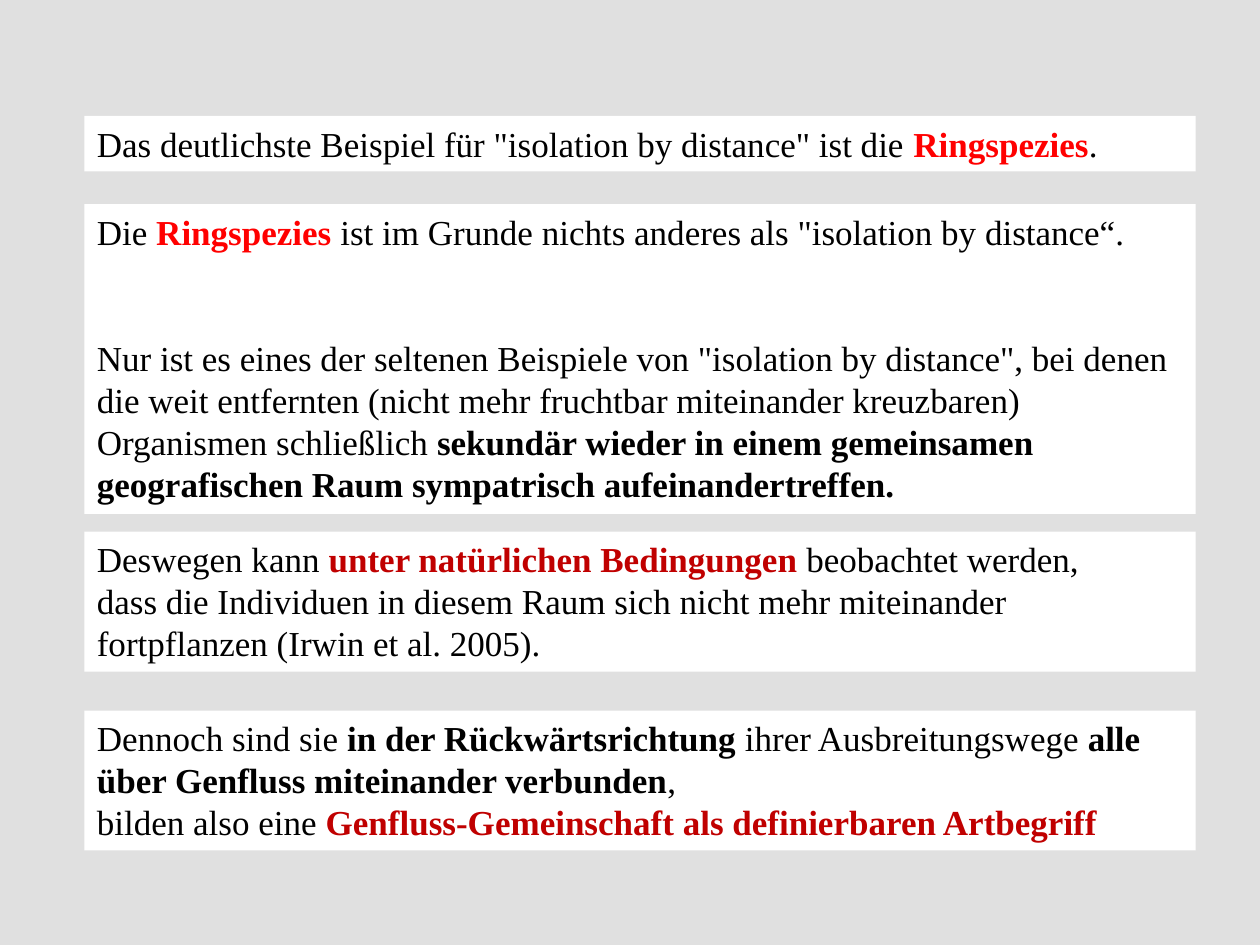
import pptx
import pptx.util
import pptx.dml.color
import pptx.enum.text

Inches, Pt = pptx.util.Inches, pptx.util.Pt
Color = pptx.dml.color.RGBColor.from_string

theme = {
    "font": "Times New Roman",
    "size": Pt(20),
    "gap": Pt(48),
    "back": Color("E0E0E0"),
    "panel": Color("FFFFFF"),
    "text": Color("000000"),
    "bold": Color("000000"),
    "red": Color("FF0000"),
    "dark": Color("C00000"),
}

panels = [
    (0.92, 0.44, [
        [('Das deutlichste Beispiel für "isolation by distance" ist die ', "text"),
         ("Ringspezies", "red"), (".", "text")],
    ]),
    (1.62, 2.46, [
        [("Die", "text"), (" Ringspezies", "red"),
         (' ist im Grunde nichts anderes als "isolation by distance“.', "text")],
        [('Nur ist es eines der seltenen Beispiele von "isolation by distance", '
          "bei denen die weit entfernten (nicht mehr fruchtbar miteinander "
          "kreuzbaren) Organismen schließlich ", "text"),
         ("sekundär wieder in einem gemeinsamen geografischen Raum "
          "sympatrisch aufeinandertreffen.", "bold")],
    ]),
    (4.22, 1.11, [
        [("Deswegen kann ", "text"), ("unter natürlichen Bedingungen ", "dark"),
         ("beobachtet werden,", "text")],
        [("dass die Individuen in diesem Raum sich nicht mehr miteinander "
          "fortpflanzen (Irwin et al. 2005).", "text")],
    ]),
    (5.64, 1.11, [
        [("Dennoch sind sie ", "text"), ("in der Rückwärtsrichtung ", "bold"),
         ("ihrer Ausbreitungswege ", "text"),
         ("alle über Genfluss miteinander verbunden", "bold"), (",", "text")],
        [("bilden also eine ", "text"),
         ("Genfluss-Gemeinschaft als definierbaren Artbegriff", "dark")],
    ]),
]

deck = pptx.Presentation()
deck.slide_width, deck.slide_height = Inches(10), Inches(7.5)
slide = deck.slides.add_slide(deck.slide_layouts[6])
slide.background.fill.solid()
slide.background.fill.fore_color.rgb = theme["back"]

for top, height, lines in panels:
    box = slide.shapes.add_textbox(Inches(0.67), Inches(top), Inches(8.82), Inches(height))
    box.fill.solid()
    box.fill.fore_color.rgb = theme["panel"]
    frame = box.text_frame
    frame.word_wrap = True
    frame.auto_size = pptx.enum.text.MSO_AUTO_SIZE.SHAPE_TO_FIT_TEXT
    for row, line in enumerate(lines):
        para = frame.add_paragraph() if row else frame.paragraphs[0]
        para.font.name = theme["font"]
        para.font.size = theme["size"]
        if row and top == 1.62:
            para.space_before = theme["gap"]
        for words, style in line:
            run = para.add_run()
            run.text = words
            run.font.bold = style != "text"
            run.font.color.rgb = theme[style]

deck.save("out.pptx")
